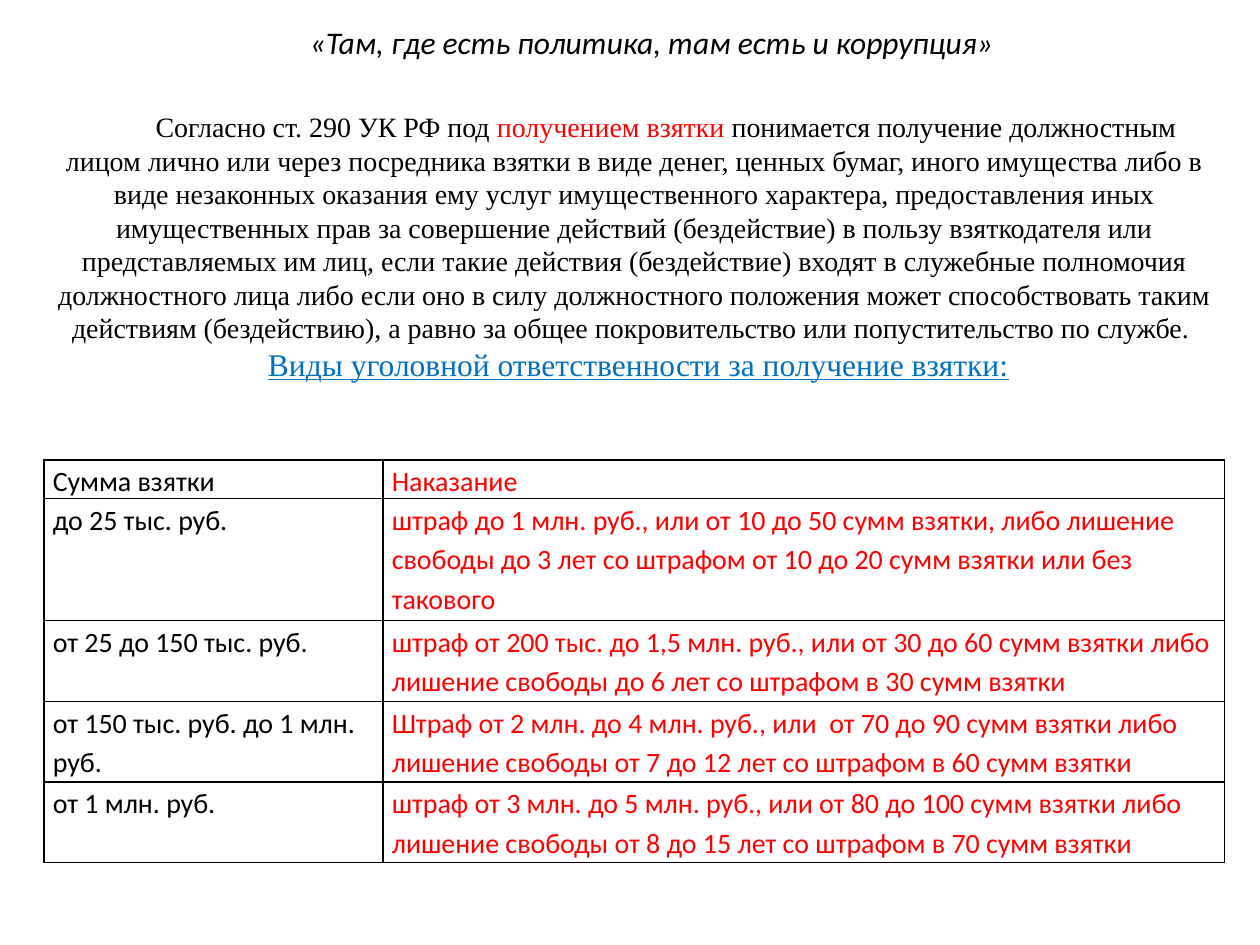
from dataclasses import dataclass

from lxml import etree
from pptx import Presentation
from pptx.dml.color import RGBColor
from pptx.enum.text import MSO_ANCHOR, PP_ALIGN
from pptx.oxml.ns import qn
from pptx.util import Inches, Pt

CENTER = PP_ALIGN.CENTER
LEFT = PP_ALIGN.LEFT
TOP = MSO_ANCHOR.TOP


@dataclass(frozen=True)
class Theme:
    black: RGBColor = RGBColor(0x00, 0x00, 0x00)
    red: RGBColor = RGBColor(0xFF, 0x00, 0x00)
    blue: RGBColor = RGBColor(0x00, 0x70, 0xC0)
    sans: str = "Calibri"
    serif: str = "Times New Roman"
    large: Pt = Pt(18)
    normal: Pt = Pt(16)


theme = Theme()


def style_paragraph(para, font_name, size, color, alignment):
    para.alignment = alignment
    para.font.name = font_name
    para.font.size = size
    para.font.color.rgb = color


def add_border(cell, side):
    line = etree.SubElement(cell._tc.get_or_add_tcPr(), qn(f"a:{side}"), w=str(Pt(1)))
    fill = etree.SubElement(line, qn("a:solidFill"))
    etree.SubElement(fill, qn("a:srgbClr"), val=str(theme.black))


deck = Presentation()
deck.slide_width = Inches(10)
deck.slide_height = Inches(7.5)
page = deck.slides.add_slide(deck.slide_layouts[5])

title = page.shapes.title
title.left, title.top = Inches(0.2), Inches(0.13)
title.width, title.height = Inches(10), Inches(0.4)
title.text_frame.vertical_anchor = TOP
title.text_frame.word_wrap = True
para = title.text_frame.paragraphs[0]
para.text = "«Там, где есть политика, там есть и коррупция» "
style_paragraph(para, theme.sans, theme.large, theme.black, CENTER)
para.font.italic = True

box = page.shapes.add_textbox(Inches(0.35), Inches(0.82), Inches(9.37), Inches(2.56))
box.text_frame.word_wrap = True
definition = box.text_frame.paragraphs[0]
style_paragraph(definition, theme.serif, theme.normal, theme.black, CENTER)
definition._p.get_or_add_pPr().set("indent", str(Inches(0.5)))
definition_parts = [
    ("Согласно ст. 290 УК РФ под ", theme.black),
    ("получением взятки", theme.red),
    (" понимается получение должностным лицом лично или через посредника взятки "
     "в виде денег, ценных бумаг, иного имущества либо в виде незаконных оказания "
     "ему услуг имущественного характера, предоставления иных имущественных прав "
     "за совершение действий (бездействие) в пользу взяткодателя или представляемых "
     "им лиц, если такие действия (бездействие) входят в служебные полномочия "
     "должностного лица либо если оно в силу должностного положения может "
     "способствовать таким действиям (бездействию), а равно за общее "
     "покровительство или попустительство по службе. ", theme.black),
]
for text, color in definition_parts:
    span = definition.add_run()
    span.text = text
    span.font.color.rgb = color

heading = box.text_frame.add_paragraph()
style_paragraph(heading, theme.serif, theme.large, theme.blue, CENTER)
heading.add_run().text = " "
span = heading.add_run()
span.text = "Виды уголовной ответственности за получение взятки:"
span.font.underline = True

penalties = [
    ("Сумма взятки", "Наказание"),
    ("до 25 тыс. руб.",
     "штраф до 1 млн. руб., или от 10 до 50 сумм взятки, либо лишение свободы "
     "до 3 лет со штрафом от 10 до 20 сумм взятки или без такового"),
    ("от 25 до 150 тыс. руб.",
     "штраф от 200 тыс. до 1,5 млн. руб., или от 30 до 60 сумм взятки либо "
     "лишение свободы до 6 лет со штрафом в 30 сумм взятки"),
    ("от 150 тыс. руб. до 1 млн. руб.",
     "Штраф от 2 млн. до 4 млн. руб., или  от 70 до 90 сумм взятки либо "
     "лишение свободы от 7 до 12 лет со штрафом в 60 сумм взятки"),
    ("от 1 млн. руб.",
     "штраф от 3 млн. до 5 млн. руб., или от 80 до 100 сумм взятки либо "
     "лишение свободы от 8 до 15 лет со штрафом в 70 сумм взятки"),
]
column_widths = [2.69, 6.68]
row_heights = [0.09, 0.97, 0.64, 0.64, 0.64]
column_colors = [theme.black, theme.red]

table = page.shapes.add_table(
    len(penalties), len(column_widths),
    Inches(0.35), Inches(3.65), Inches(9.37), Inches(3.18),
).table
table.first_row = False
table.horz_banding = False
for column, width in zip(table.columns, column_widths):
    column.width = Inches(width)
for row, height, texts in zip(table.rows, row_heights, penalties):
    row.height = Inches(height)
    for cell, text, color in zip(row.cells, texts, column_colors):
        cell.margin_left = cell.margin_right = Inches(0.07)
        cell.margin_top = cell.margin_bottom = 0
        cell.vertical_anchor = TOP
        para = cell.text_frame.paragraphs[0]
        para.text = text
        para.line_spacing = 1.15
        style_paragraph(para, theme.sans, theme.normal, color, LEFT)
        for side in ("lnL", "lnR", "lnT", "lnB"):
            add_border(cell, side)
        cell.fill.background()

deck.save("out.pptx")
